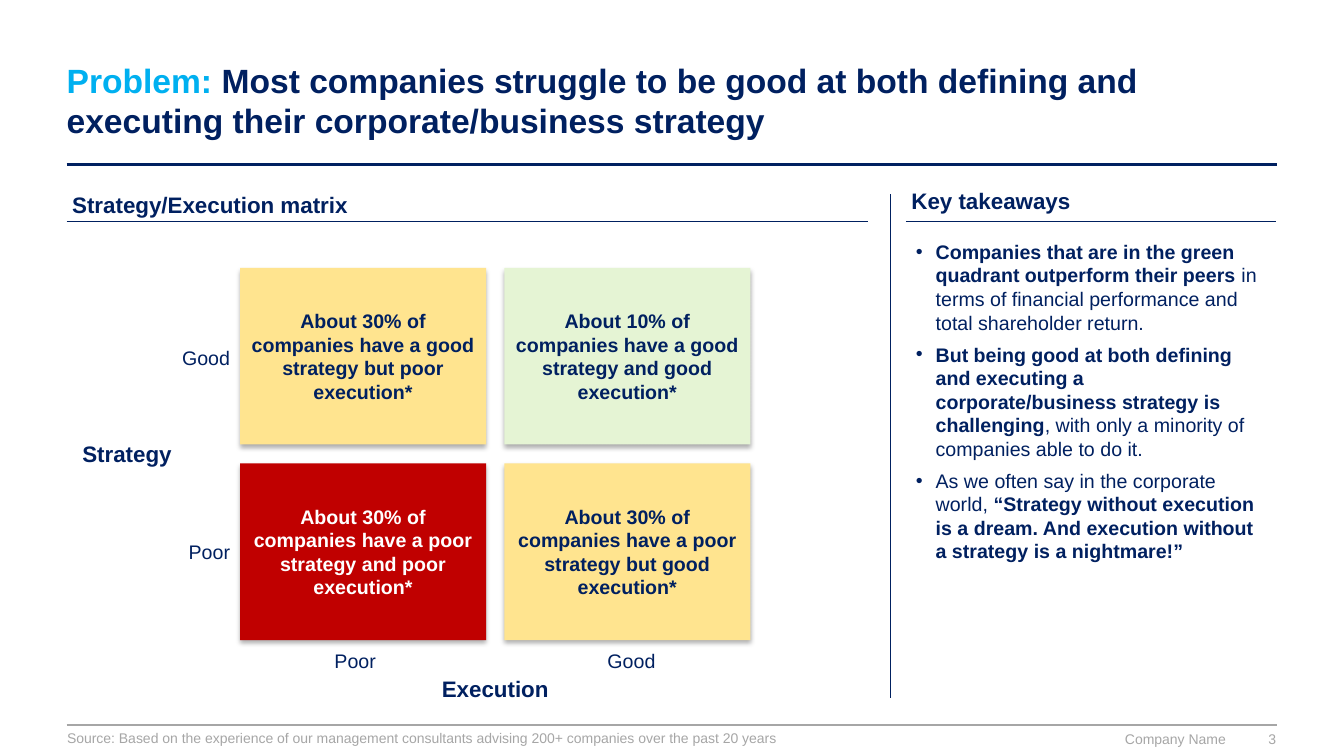
from lxml.etree import SubElement
from pptx import Presentation
from pptx.dml.color import RGBColor
from pptx.enum.shapes import MSO_CONNECTOR as Connector, MSO_SHAPE as Shape
from pptx.enum.text import MSO_ANCHOR as Anchor, PP_ALIGN as Align
from pptx.oxml.ns import qn
from pptx.util import Cm, Pt

NAVY, CYAN, GREY, WHITE = "002060", "00B0F0", "A6A6A6", "FFFFFF"
YELLOW, GREEN, RED = "FFE48F", "E5F4D4", "C00000"
MARGIN, RIGHT = 1.68, 32.18


def color(value):
    """Turn a hex string into a colour."""
    return RGBColor.from_string(value)


def add_bullet(para):
    """Give a paragraph a hanging bullet."""
    properties = para._p.get_or_add_pPr()
    properties.set("marL", str(Cm(0.5)))
    properties.set("indent", str(Cm(-0.5)))
    SubElement(properties, qn("a:buFont"), typeface="Arial")
    SubElement(properties, qn("a:buChar"), char="•")


def write(box, paras, size=14, fill=NAVY, bold=False, align=Align.LEFT,
          anchor=Anchor.TOP, wrap=True, inset=None, bullets=False, gap=0):
    """Fill a shape with paragraphs, each a list of (text, run format) pairs."""
    frame = box.text_frame
    frame.word_wrap = wrap
    frame.vertical_anchor = anchor
    if inset is not None:
        frame.margin_left = frame.margin_right = Cm(inset)
        frame.margin_top = frame.margin_bottom = Cm(inset)
    if isinstance(paras, str):
        paras = [[(paras, {})]]
    for index, spans in enumerate(paras):
        para = frame.add_paragraph() if index else frame.paragraphs[0]
        para.alignment = align
        if gap:
            para.space_after = Pt(gap)
            if index:
                para.space_before = Pt(gap)
        if bullets:
            add_bullet(para)
        for text, style in spans:
            span = para.add_run()
            span.text = text
            span.font.name = "Arial"
            span.font.size = Pt(size)
            span.font.bold = style.get("bold", bold)
            span.font.color.rgb = color(style.get("fill", fill))


def add_text(page, box, paras, **style):
    """Place a text box at (left, top, width, height)."""
    write(page.shapes.add_textbox(*map(Cm, box)), paras, **style)


def add_rule(page, start, end, line=NAVY, width=0.5):
    """Draw a straight line without a shadow."""
    rule = page.shapes.add_connector(
        Connector.STRAIGHT, *map(Cm, (*start, *end)))
    rule.line.color.rgb = color(line)
    rule.line.width = Pt(width)
    SubElement(rule._element.spPr, qn("a:effectLst"))


def add_soft_shadow(shape):
    """Put a soft shadow below a shape."""
    shape.shadow.inherit = False
    effects = shape._element.spPr.find(qn("a:effectLst"))
    shadow = SubElement(effects, qn("a:outerShdw"), blurRad=str(Pt(3.5)),
                        dist=str(Pt(2.2)), dir="5400000", algn="t",
                        rotWithShape="0")
    tint = SubElement(shadow, qn("a:srgbClr"), val="000000")
    SubElement(tint, qn("a:alpha"), val="32000")


def add_header(page, left, top, width, height):
    """Add the title and the thick rule below it."""
    title = [[("Problem: ", {"fill": CYAN}),
              ("Most companies struggle to be good at both defining and "
               "executing their corporate/business strategy", {})]]
    add_text(page, (left - 0.25, top, width + 0.25, height), title,
             size=24, bold=True, anchor=Anchor.MIDDLE)
    rule_top = top + height + 0.12
    add_rule(page, (left, rule_top), (left + width, rule_top), width=2)


def add_heading(page, left, top, width, text):
    """Add a section heading with a thin rule at a fixed height."""
    add_text(page, (left - 0.11, top, width, 0.94), text, size=16, bold=True)
    add_rule(page, (left, 5.59), (left + width, 5.59))


def add_matrix(page, left, top, cell_width, cell_height):
    """Add the two-by-two matrix with its axis labels."""
    column_step, row_step = cell_width + 0.46, cell_height + 0.48
    cells = [[("30", "good strategy but poor", YELLOW, NAVY),
              ("10", "good strategy and good", GREEN, NAVY)],
             [("30", "poor strategy and poor", RED, WHITE),
              ("30", "poor strategy but good", YELLOW, NAVY)]]
    for row, quadrants in enumerate(cells):
        for column, (share, kind, fill, ink) in enumerate(quadrants):
            cell = page.shapes.add_shape(
                Shape.RECTANGLE, Cm(left + column * column_step),
                Cm(top + row * row_step), Cm(cell_width), Cm(cell_height))
            cell.fill.solid()
            cell.fill.fore_color.rgb = color(fill)
            cell.line.fill.background()
            add_soft_shadow(cell)
            write(cell, f"About {share}% of companies have a {kind} execution*",
                  fill=ink, bold=True, align=Align.CENTER, anchor=Anchor.MIDDLE)

    ticks = [("Poor", 2.13, 9.42, Align.LEFT), ("Good", 8.81, 9.42, Align.RIGHT),
             ("Good", -1.91, 1.8, Align.RIGHT), ("Poor", -1.91, 6.67, Align.RIGHT)]
    for text, across, down, align in ticks:
        add_text(page, (left + across, top + down, 1.91, 0.94), text,
                 align=align, anchor=Anchor.MIDDLE, wrap=False)
    axes = [("Strategy", -4.5, 4.22, 3.3), ("Execution", 4.36, 10.13, 4.14)]
    for text, across, down, width in axes:
        add_text(page, (left + across, top + down, width, 0.94), text, size=16,
                 bold=True, align=Align.CENTER, anchor=Anchor.MIDDLE, wrap=False)


def add_takeaways(page, left, top, width, height):
    """Add the bulleted takeaways."""
    strong = {"bold": True}
    takeaways = [
        [("Companies that are in the green quadrant outperform their peers ", strong),
         ("in terms of financial performance and total shareholder return.", {})],
        [("But being good at both defining and executing a corporate/business "
          "strategy is challenging", strong),
         (", with only a minority of companies able to do it.", {})],
        [("As we often say in the corporate world, ", {}),
         ("“Strategy without execution is a dream. And execution without a "
          "strategy is a nightmare!”", strong)]]
    add_text(page, (left, top, width, height), takeaways, bullets=True, gap=3)


def add_footer(page, left, top, width):
    """Add the footer rule, source, company name and page number."""
    right = left + width
    add_rule(page, (left, top), (right, top), line=GREY, width=1.25)
    small = {"size": 10, "fill": GREY}
    add_text(page, (left - 0.24, top, 20, 0.69),
             "Source: Based on the experience of our management consultants "
             "advising 200+ companies over the past 20 years",
             anchor=Anchor.MIDDLE, **small)
    add_text(page, (right - 8.25, top + 0.16, 6.96, 0.43), "Company Name",
             align=Align.RIGHT, inset=0, **small)
    add_text(page, (right - 1.02, top + 0.1, 1, 0.53), "3",
             align=Align.RIGHT, anchor=Anchor.MIDDLE, inset=0, **small)


def main():
    """Build and save the deck."""
    deck = Presentation()
    deck.slide_width, deck.slide_height = Cm(33.87), Cm(19.05)
    page = deck.slides.add_slide(deck.slide_layouts[6])
    add_header(page, MARGIN, 1.02, RIGHT - MARGIN, 3)
    add_heading(page, MARGIN, 4.69, 20.19, "Strategy/Execution matrix")
    add_heading(page, 22.83, 4.6, 9.33, "Key takeaways")
    add_rule(page, (22.43, 4.9), (22.43, 17.6))
    add_matrix(page, 6.05, 6.75, 6.2, 4.45)
    add_takeaways(page, 22.83, 5.92, 9.3, 9.19)
    add_footer(page, MARGIN, 18.26, RIGHT - MARGIN)
    deck.save("out.pptx")


if __name__ == "__main__":
    main()
